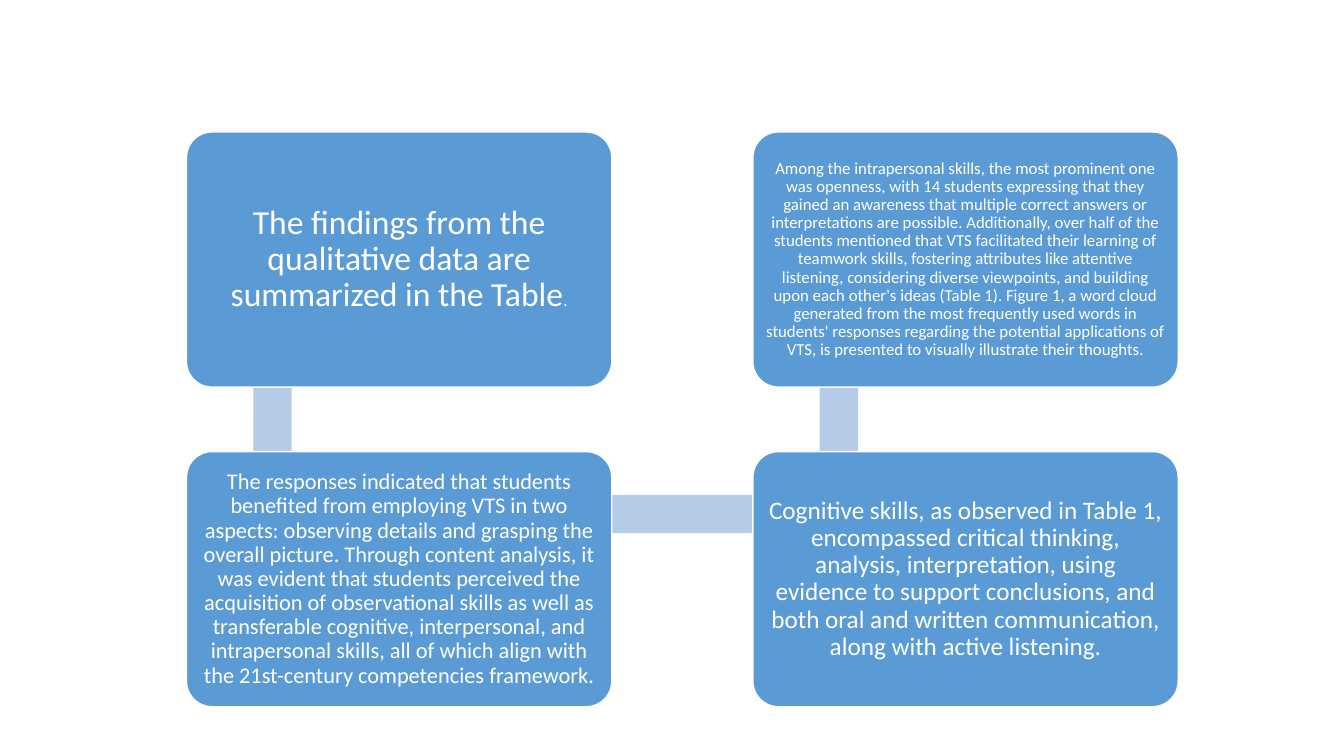
from pptx import Presentation
from pptx import util as u
from pptx.dml.color import RGBColor
from pptx.enum import shapes, text

COLOURS = {"box": "5B9BD5", "bar": "B5CBE7", "white": "FFFFFF"}
FONT = "Calibri"

# Grid of boxes, in points
COLUMNS = (133.2, 537.8)
ROWS = (94.3, 322.6)
BOX_WIDTH, BOX_HEIGHT = 303.8, 182.2

# Bars that link the boxes
BAR = 27.4
BAR_INDENT = 47.7
BAR_TOP, BAR_HEIGHT = 139, 227.5
LINK_TOP = 353.5

# Column, row, inset, runs of (text, size), in reading order
FINDINGS = [
    (0, 0, 7.2, [
        ("The findings from the qualitative data are summarized in the Table", 24),
        (".", 12)]),
    (0, 1, 4.8, [
        ("The responses indicated that students benefited from employing VTS in "
         "two aspects: observing details and grasping the overall picture. "
         "Through content analysis, it was evident that students perceived the "
         "acquisition of observational skills as well as transferable cognitive, "
         "interpersonal, and intrapersonal skills, all of which align with the "
         "21st-century competencies framework.", 16)]),
    (1, 1, 5.4, [
        ("Cognitive skills, as observed in Table 1, encompassed critical "
         "thinking, analysis, interpretation, using evidence to support "
         "conclusions, and both oral and written communication, along with "
         "active listening.", 18)]),
    (1, 0, 3.6, [
        ("Among the intrapersonal skills, the most prominent one was openness, "
         "with 14 students expressing that they gained an awareness that "
         "multiple correct answers or interpretations are possible. "
         "Additionally, over half of the students mentioned that VTS facilitated "
         "their learning of teamwork skills, fostering attributes like attentive "
         "listening, considering diverse viewpoints, and building upon each "
         "other's ideas (Table 1). Figure 1, a word cloud generated from the "
         "most frequently used words in students' responses regarding the "
         "potential applications of VTS, is presented to visually illustrate "
         "their thoughts.", 12)]),
]


def colour(name):
    return RGBColor.from_string(COLOURS[name])


def add_filled(page, kind, left, top, width, height, fill):
    shape = page.shapes.add_shape(
        kind, u.Pt(left), u.Pt(top), u.Pt(width), u.Pt(height))
    shape.shadow.inherit = False
    shape.fill.solid()
    shape.fill.fore_color.rgb = colour(fill)
    return shape


def add_bar(page, left, top, width, height):
    bar = add_filled(page, shapes.MSO_SHAPE.RECTANGLE,
                     left, top, width, height, "bar")
    bar.line.fill.background()


def add_box(page, column, row, inset, runs):
    box = add_filled(page, shapes.MSO_SHAPE.ROUNDED_RECTANGLE,
                     COLUMNS[column], ROWS[row], BOX_WIDTH, BOX_HEIGHT, "box")
    box.adjustments[0] = 0.1
    box.line.color.rgb = colour("white")
    box.line.width = u.Pt(1)

    frame = box.text_frame
    frame.word_wrap = True
    frame.vertical_anchor = text.MSO_ANCHOR.MIDDLE
    frame.margin_left = frame.margin_right = u.Pt(inset)
    frame.margin_top = frame.margin_bottom = u.Pt(inset)

    para = frame.paragraphs[0]
    para.alignment = text.PP_ALIGN.CENTER
    para.line_spacing = 0.9
    for words, size in runs:
        span = para.add_run()
        span.text = words
        span.font.name = FONT
        span.font.size = u.Pt(size)
        span.font.color.rgb = colour("white")


def main():
    deck = Presentation()
    deck.slide_width, deck.slide_height = u.Pt(960), u.Pt(540)
    page = deck.slides.add_slide(deck.slide_layouts[6])

    # Bars behind the boxes
    for left in COLUMNS:
        add_bar(page, left + BAR_INDENT, BAR_TOP, BAR, BAR_HEIGHT)
    add_bar(page, COLUMNS[0] + BAR_INDENT + BAR / 2, LINK_TOP,
            COLUMNS[1] - COLUMNS[0], BAR)

    # Boxes with the findings
    for column, row, inset, runs in FINDINGS:
        add_box(page, column, row, inset, runs)

    deck.save("out.pptx")


if __name__ == "__main__":
    main()
